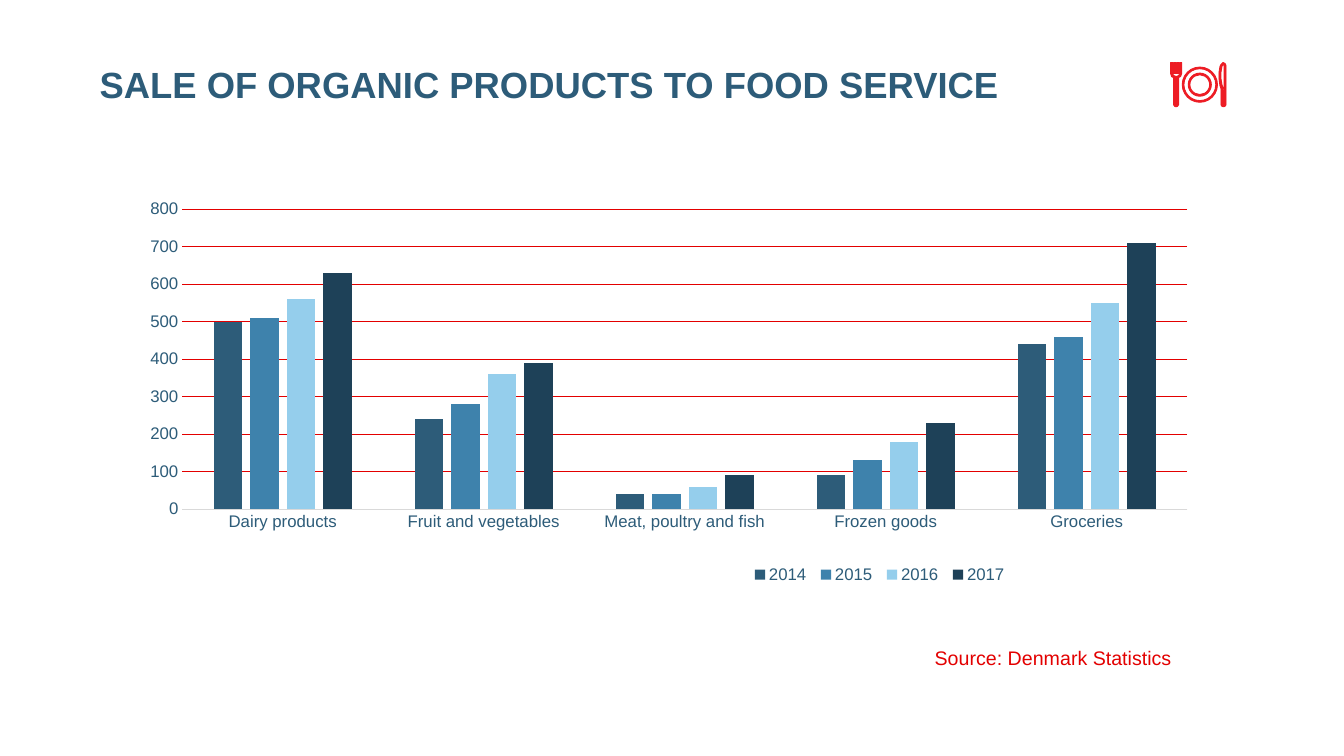
from lxml import etree
from pptx import Presentation
from pptx.chart.data import CategoryChartData
from pptx.dml.color import RGBColor
from pptx.enum.chart import XL_CHART_TYPE, XL_LEGEND_POSITION, XL_TICK_MARK
from pptx.enum.shapes import MSO_SHAPE
from pptx.oxml.ns import qn
from pptx.util import Inches, Pt

CLUSTERED = XL_CHART_TYPE.COLUMN_CLUSTERED
LEGEND_BOTTOM = XL_LEGEND_POSITION.BOTTOM
NO_TICK = XL_TICK_MARK.NONE
DONUT = MSO_SHAPE.DONUT

FONT = "Arial"
COLORS = {
    "navy": "2D5C79", "blue": "3E82AC", "sky": "95CEEC", "midnight": "1E4158",
    "red": "E30000", "icon": "ED1C24", "axis": "D9D9D9",
}
CATEGORIES = ["Dairy products", "Fruit and vegetables", "Meat, poultry and fish",
              "Frozen goods", "Groceries"]
SALES = [
    ("2014", "navy", (500, 240, 40, 90, 440)),
    ("2015", "blue", (510, 280, 40, 130, 460)),
    ("2016", "sky", (560, 360, 60, 180, 550)),
    ("2017", "midnight", (630, 390, 90, 230, 710)),
]
FORK = [
    [(9, 9), (8, 9), (8, 0), (6, 0), (6, 9), (5, 9), (5, 0), (3, 0), (3, 9), (2, 9),
     (2, 0), (0, 0), (0, 11), (1, 14), (3, 15), (3, 42), (4, 43.5), (5.5, 44),
     (7, 43.5), (8, 42), (8, 15), (10, 14), (11, 11), (11, 0), (9, 0)],
    [(5, 15), (6, 15), (6, 42), (5.5, 43), (5, 42)],
    [(2, 11), (9, 11), (8, 13), (6, 14), (3, 13)],
]
KNIFE = [
    [(4, 0), (2, 2), (1, 4), (0, 10), (0, 16), (1, 23), (2, 26), (2, 42), (3, 43.5),
     (4.5, 44), (6, 43.5), (7, 42), (7, 3), (6, 1)],
    [(4, 27), (5, 27), (5, 42), (4.5, 43), (4, 42)],
    [(4, 25), (3, 22), (2, 16), (2, 10), (3, 4), (4, 2), (5, 3), (5, 25)],
]


def color(name):
    """Return the named colour."""
    return RGBColor.from_string(COLORS[name])


def style_font(font, size, name):
    """Set the typeface, size and colour of a font."""
    font.name, font.size = FONT, Pt(size)
    font.color.rgb = color(name)


def add_text(slide, box, text, size, name, inset=(0, 0), bold=False, spacing=1.0):
    """Place one paragraph in the box."""
    shape = slide.shapes.add_textbox(*map(Inches, box))
    frame = shape.text_frame
    frame.word_wrap = True
    frame.margin_left = frame.margin_right = Inches(inset[0])
    frame.margin_top = frame.margin_bottom = Inches(inset[1])
    paragraph = frame.paragraphs[0]
    paragraph.text = text
    paragraph.line_spacing = spacing
    style_font(paragraph.font, size, name)
    paragraph.font.bold = bold


def make_layout(**settings):
    """Build a manual chart layout from its settings."""
    layout = etree.Element(qn("c:layout"))
    manual = etree.SubElement(layout, qn("c:manualLayout"))
    for tag, value in settings.items():
        etree.SubElement(manual, qn(f"c:{tag}")).set("val", str(value))
    return layout


def add_sales_chart(slide, box):
    """Place the clustered column chart in the box."""
    data = CategoryChartData()
    data.categories = CATEGORIES
    for year, _, values in SALES:
        data.add_series(year, values)
    chart = slide.shapes.add_chart(CLUSTERED, *map(Inches, box), data).chart
    style_font(chart.font, 12, "navy")
    chart.has_title = False

    plot = chart.plots[0]
    plot.gap_width, plot.overlap, plot.vary_by_categories = 219, -27, False
    for series, (_, name, _) in zip(plot.series, SALES):
        series.format.fill.solid()
        series.format.fill.fore_color.rgb = color(name)

    for axis in (chart.category_axis, chart.value_axis):
        axis.major_tick_mark = axis.minor_tick_mark = NO_TICK
        style_font(axis.tick_labels.font, 12, "navy")
    category_line = chart.category_axis.format.line
    category_line.color.rgb, category_line.width = color("axis"), Pt(0.75)
    values = chart.value_axis
    values.minimum_scale, values.maximum_scale, values.major_unit = 0, 800, 100
    values.format.line.fill.background()
    grid_line = values.major_gridlines.format.line
    grid_line.color.rgb, grid_line.width = color("red"), Pt(0.75)

    chart.has_legend = True
    chart.legend.position = LEGEND_BOTTOM
    chart.legend.include_in_layout = False
    style_font(chart.legend.font, 12, "navy")

    area = chart.element.find(".//" + qn("c:plotArea"))
    for layout in area.findall(qn("c:layout")):
        area.remove(layout)
    area.insert(0, make_layout(layoutTarget="inner", xMode="edge", yMode="edge",
                               x=0.084, y=0.049, w=0.902, h=0.752))
    chart.element.find(".//" + qn("c:legendPos")).addnext(
        make_layout(xMode="edge", yMode="edge", x=0.59, y=0.93, w=0.24, h=0.07))


def paint_icon(shape):
    """Give an icon part its red fill and outline."""
    shape.shadow.inherit = False
    shape.fill.solid()
    shape.fill.fore_color.rgb = shape.line.color.rgb = color("icon")
    shape.line.width = Pt(0.63)


def add_cutlery(shapes, left, top, unit, contours):
    """Draw a utensil from contours measured in units."""
    scaled = [[(x * unit, y * unit) for x, y in contour] for contour in contours]
    builder = shapes.build_freeform(*scaled[0][0], scale=1.0)
    builder.add_line_segments(scaled[0][1:], close=True)
    for hole in scaled[1:]:
        builder.move_to(*hole[0])
        builder.add_line_segments(hole[1:], close=True)
    paint_icon(builder.convert_to_shape(left, top))


def add_meal_icon(slide, box):
    """Place the plate, knife and fork in the box."""
    left, top, width, height = map(Inches, box)
    shapes = slide.shapes.add_group_shape().shapes
    unit = height / 44
    for diameter in (35, 23):
        size = round(diameter * unit)
        ring = shapes.add_shape(DONUT, left + round(29 * unit) - size // 2,
                                top + (height - size) // 2, size, size)
        ring.adjustments[0] = 1.7 / diameter
        paint_icon(ring)
    add_cutlery(shapes, left + width - round(7 * unit), top, unit, KNIFE)
    add_cutlery(shapes, left, top, unit, FORK)


def main():
    """Build and save the slide."""
    presentation = Presentation()
    presentation.slide_width, presentation.slide_height = Inches(13.33), Inches(7.5)
    slide = presentation.slides.add_slide(presentation.slide_layouts[6])
    add_text(slide, (0.89, 0.62, 11.47, 1.17), "SALE OF ORGANIC PRODUCTS TO FOOD SERVICE",
             26, "navy", inset=(0.1, 0.05), bold=True, spacing=0.9)
    add_sales_chart(slide, (0.88, 1.88, 11.05, 3.96))
    add_text(slide, (9.27, 6.41, 2.44, 0.24), "Source: Denmark Statistics", 14, "red")
    add_meal_icon(slide, (11.61, 0.62, 0.55, 0.44))
    presentation.save("out.pptx")


if __name__ == "__main__":
    main()
